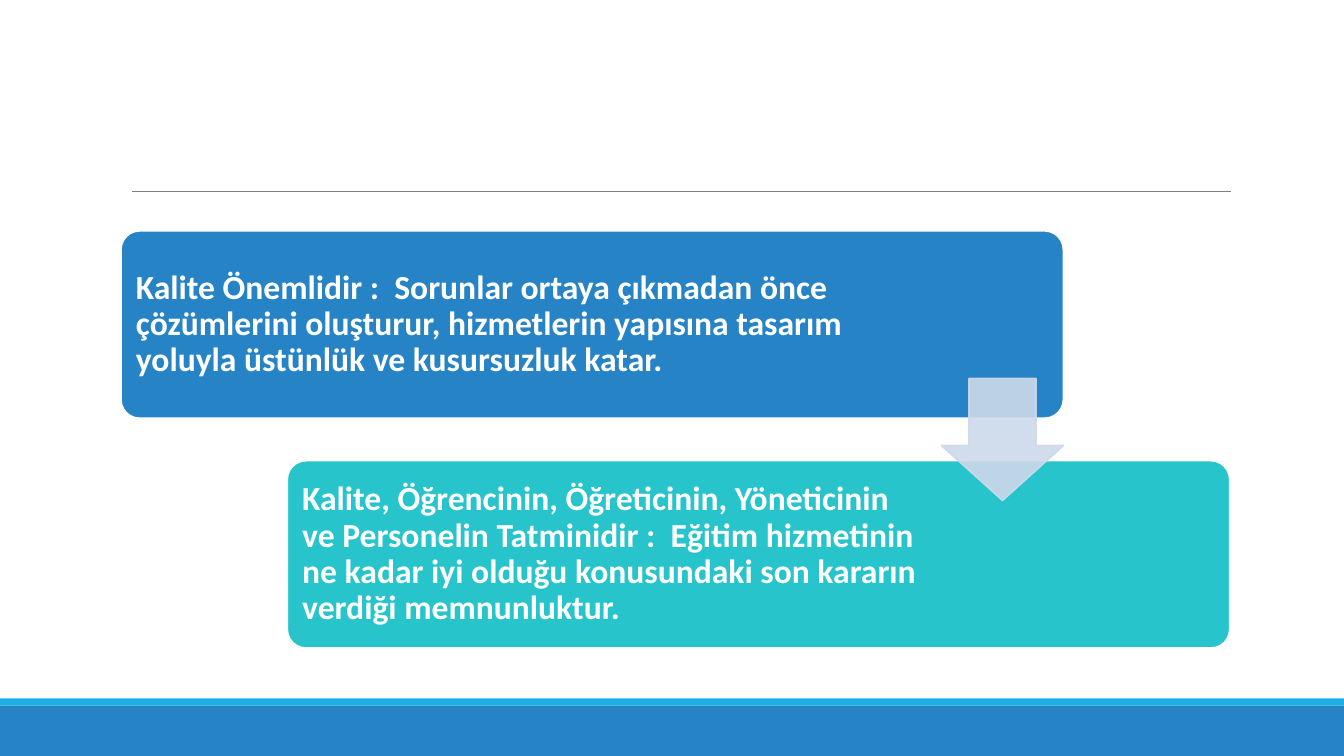
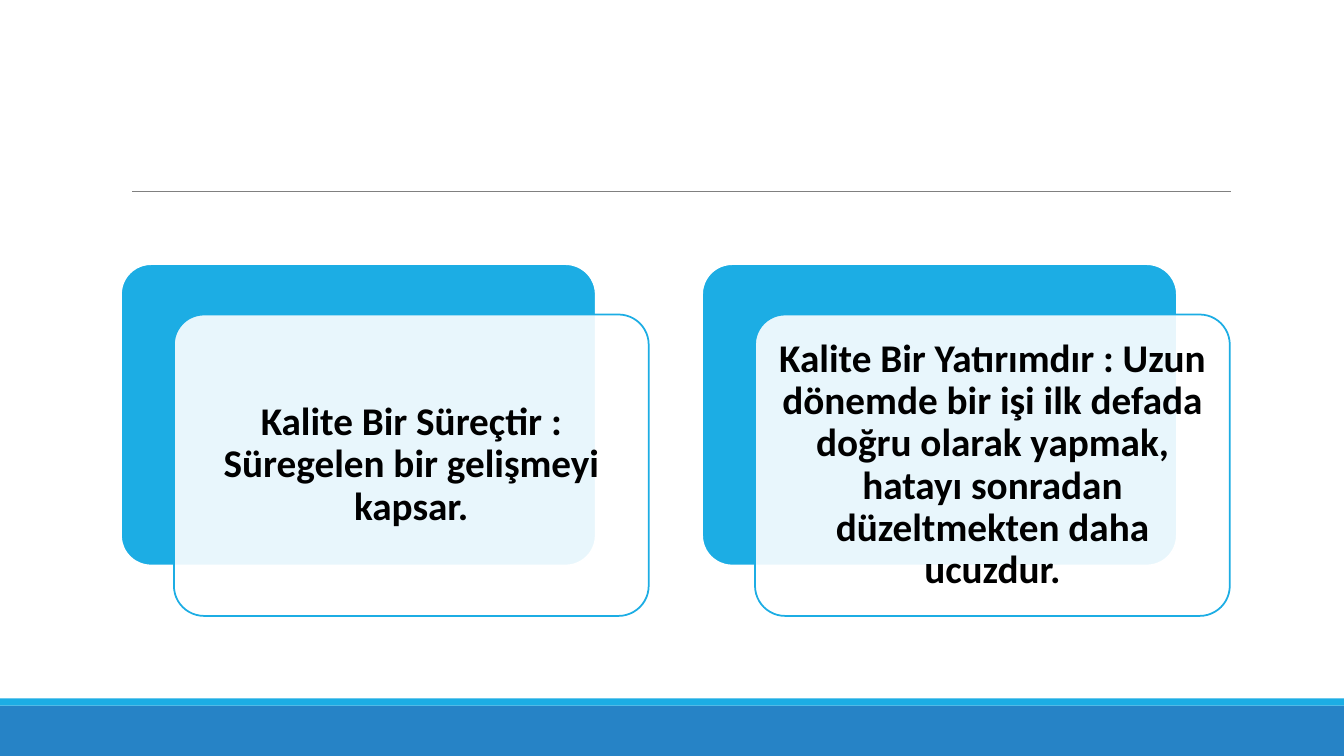
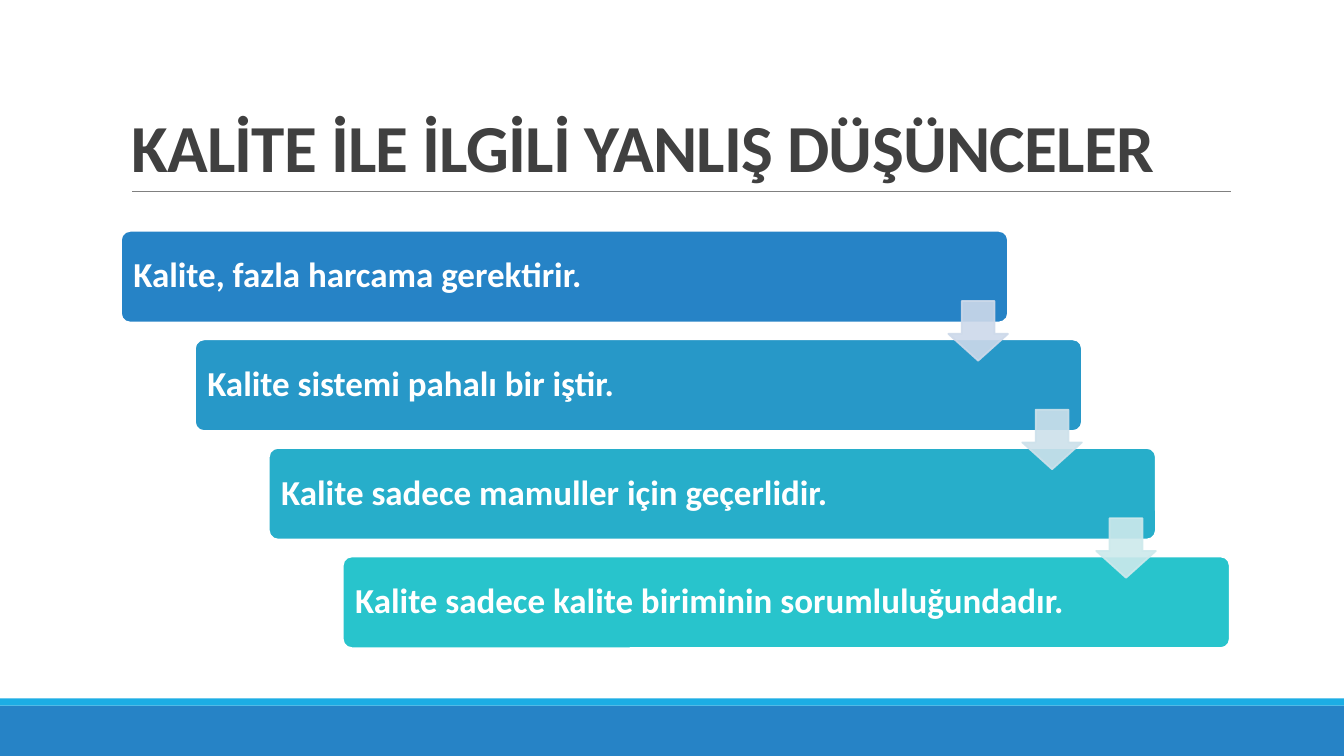
from lxml.etree import SubElement
from pptx import Presentation
from pptx.dml.color import RGBColor
from pptx.enum.shapes import MSO_CONNECTOR, MSO_SHAPE
from pptx.enum.text import MSO_ANCHOR, MSO_AUTO_SIZE, PP_ALIGN
from pptx.oxml.ns import qn
from pptx.util import Inches, Pt

COLS, ROWS = 133.33, 75
LEFT, WIDE = 12, 110
BLUE, SKY, TEAL = "2683C6", "1CADE4", "28C4CC"
WHITE, BLACK, DARK, GREY = "FFFFFF", "000000", "404040", "808080"
FONT = {"name": "Calibri", "bold": True}


def hue(code):
    """Turn a hex string into a colour."""
    return RGBColor.from_string(code)


def put(item, vals):
    """Set each attribute of the item from a dict."""
    for key, val in vals.items():
        setattr(item, key, val)


class Deck:
    """Hold the style and the current slide."""

    def __init__(self):
        """Start the file and set its size and grid."""
        self.file = Presentation()
        put(self.file, {"slide_width": Inches(13.33), "slide_height": Inches(7.5)})
        self.col = self.file.slide_width / COLS
        self.row = self.file.slide_height / ROWS

    def area(self, x, y, w, h):
        """Turn columns and rows into lengths."""
        return [round(n * unit) for n, unit in
                zip((x, y, w, h), (self.col, self.row) * 2)]

    def page(self, title=None):
        """Add a slide, with a title if one is given."""
        layout = self.file.slide_layouts[5 if title else 6]
        self.slide = self.file.slides.add_slide(layout)
        if title:
            head = self.slide.shapes.title
            put(head, dict(zip(("left", "top", "width", "height"),
                               self.area(LEFT, 3.1, WIDE, 15.9))))
            self.label(head, title, 48, DARK, lead=0.85,
                       anchor=MSO_ANCHOR.BOTTOM)
            for mark in head.element.iter(qn("a:rPr")):
                mark.set("spc", "-50")

    def label(self, shape, text, size, ink, lead=0.9, pad=None,
              align=PP_ALIGN.LEFT, anchor=MSO_ANCHOR.MIDDLE):
        """Fill a shape with one styled paragraph."""
        frame = shape.text_frame
        put(frame, {"word_wrap": True, "auto_size": MSO_AUTO_SIZE.NONE,
                    "vertical_anchor": anchor})
        if pad:
            sides = ("left", "top", "right", "bottom")
            put(frame, {"margin_" + side: Inches(pad) for side in sides})
        para = frame.paragraphs[0]
        put(para, {"alignment": align, "line_spacing": lead})
        run = para.add_run()
        run.text = text
        put(run.font, {**FONT, "size": Pt(size)})
        run.font.color.rgb = hue(ink)

    def text(self, box, inset, *args, **style):
        """Add a text box set in from the edges of a box."""
        x, y, w, h = box
        dx, dy = inset
        spot = self.area(x + dx, y + dy, w - 2 * dx, h - 2 * dy)
        self.label(self.slide.shapes.add_textbox(*spot), *args, **style)

    def shape(self, kind, box, fill, edge=None, adj=(), fade=0):
        """Add a preset shape, its first colours made see-through."""
        item = self.slide.shapes.add_shape(kind, *self.area(*box))
        item.shadow.inherit = False
        for spot, val in enumerate(adj):
            item.adjustments[spot] = val
        item.fill.solid()
        item.fill.fore_color.rgb = hue(fill)
        if edge:
            item.line.color.rgb = hue(edge)
            item.line.width = Pt(1.25)
        else:
            item.line.fill.background()
        for mark in list(item.element.spPr.iter(qn("a:srgbClr")))[:fade]:
            SubElement(mark, qn("a:alpha")).set("val", "90000")
        return item

    def card(self, box, fill, edge=WHITE, fade=0):
        """Add a rounded card."""
        self.shape(MSO_SHAPE.ROUNDED_RECTANGLE, box, fill, edge, (0.1,), fade)

    def rule(self, x, y, w):
        """Add a thin level line."""
        left, top, span, _ = self.area(x, y, w, 0)
        line = self.slide.shapes.add_connector(
            MSO_CONNECTOR.STRAIGHT, left, top, left + span, top)
        line.line.color.rgb = hue(GREY)
        line.line.width = Pt(0.5)
        SubElement(line.element.spPr, qn("a:effectLst"))
        return line

    def base(self):
        """Place the bands and the title rule on the master."""
        parts = (self.shape(MSO_SHAPE.RECTANGLE, (0, 70, COLS, 5), BLUE),
                 self.shape(MSO_SHAPE.RECTANGLE, (0, 69.3, COLS, 0.7), SKY),
                 self.rule(13.1, 19, 109))
        tree = self.file.slide_master.shapes.element
        for mark, part in enumerate(parts, 20):
            next(part.element.iter(qn("p:cNvPr"))).set("id", str(mark))
            tree.append(part.element)

    def stairs(self, steps, arrows, w, h, inset, size):
        """Add cards stepping down to the right, joined by arrows."""
        top, tall = 22.9, 41.4
        gaps = len(steps) - 1
        dx, dy = (WIDE - w) / gaps, (tall - h) / gaps
        for n, (text, fill, span) in enumerate(steps):
            box = (LEFT + n * dx, top + n * dy, w, h)
            self.card(box, fill)
            self.text((*box[:2], span + 2 * inset[0], h), inset,
                      text, size, WHITE, pad=0.1)
        side = 0.65 * h
        for n, fill in enumerate(arrows):
            x = LEFT + n * dx + w - side
            y = top + n * dy + (h + dy - side) / 2
            self.shape(MSO_SHAPE.DOWN_ARROW, (x, y, side, side),
                       fill, fill, (0.55, 0.45), fade=2)

    def pairs(self, texts):
        """Add cards with a see-through text panel in front."""
        w, h = 47.1, 29.9
        for n, text in enumerate(texts):
            x, y = LEFT + n * 57.65, 26.2
            front = (x + 5.25, y + 5, w, h)
            self.card((x, y, w, h), SKY)
            self.card(front, WHITE, SKY, fade=1)
            self.text(front, (0.85, 0.85), text, 28, BLACK, pad=0.12,
                      align=PP_ALIGN.CENTER)


def main():
    """Build the three slides."""
    deck = Deck()
    deck.page()
    deck.base()
    deck.stairs([
        ("Kalite Önemlidir :  Sorunlar ortaya çıkmadan önce çözümlerini "
         "oluşturur, hizmetlerin yapısına tasarım yoluyla üstünlük ve "
         "kusursuzluk katar.", BLUE, 74.2),
        ("Kalite, Öğrencinin, Öğreticinin, Yöneticinin ve Personelin "
         "Tatminidir :  Eğitim hizmetinin ne kadar iyi olduğu konusundaki "
         "son kararın verdiği memnunluktur.", TEAL, 63.8),
    ], ["CDD9EA"], 93.5, 18.6, (0.5, 0.55), 24)

    deck.page()
    deck.pairs([
        "Kalite Bir Süreçtir : Süregelen bir gelişmeyi kapsar.",
        "Kalite Bir Yatırımdır : Uzun dönemde bir işi ilk defada doğru "
        "olarak yapmak, hatayı sonradan düzeltmekten daha ucuzdur.",
    ])

    deck.page("KALİTE İLE İLGİLİ YANLIŞ DÜŞÜNCELER")
    deck.stairs([
        ("Kalite, fazla harcama gerektirir.", BLUE, 77.4),
        ("Kalite sistemi pahalı bir iştir.", "2798C8", 74.2),
        ("Kalite sadece mamuller için geçerlidir.", "27AECA", 74.2),
        ("Kalite sadece kalite biriminin sorumluluğundadır.", TEAL, 74.2),
    ], ["CDD9EA", "CDE1EB", "CDE9EC"], 88, 9.1, (0.25, 0.25), 25)
    deck.file.save("out.pptx")


if __name__ == "__main__":
    main()
